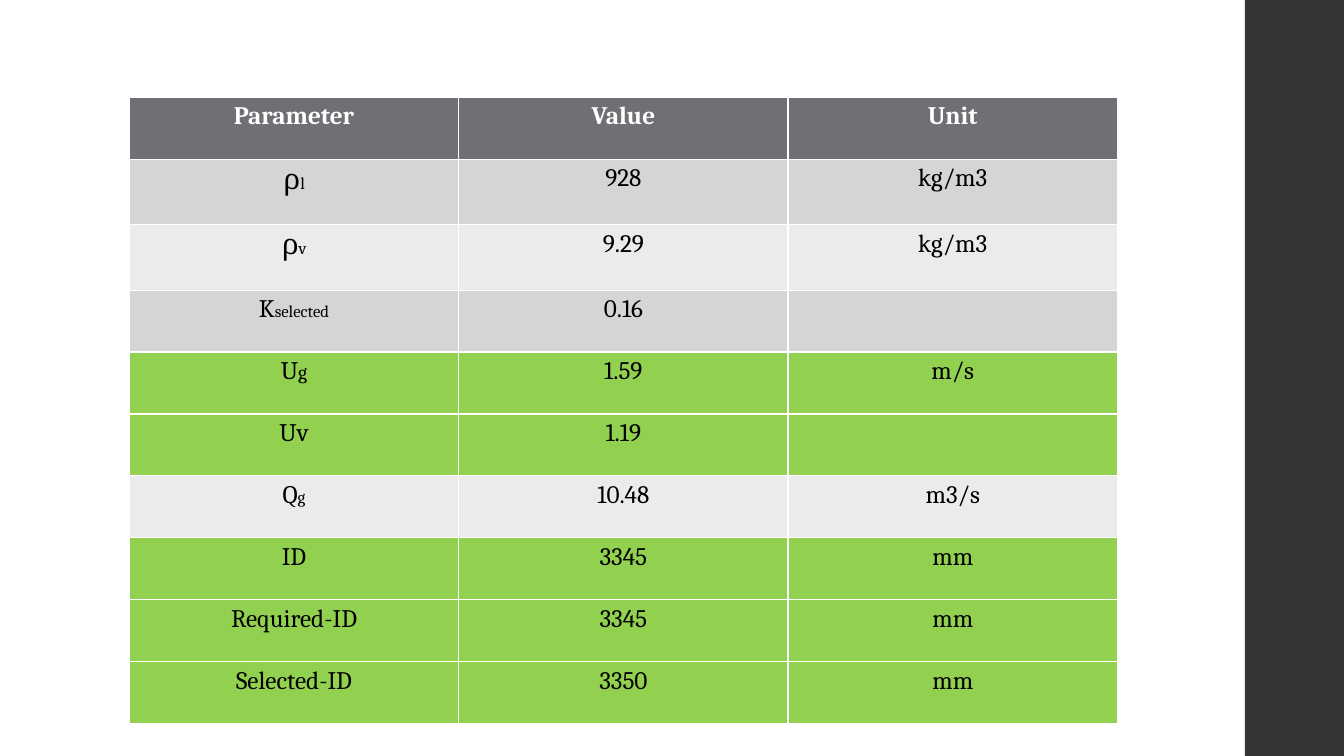
from pptx import Presentation
from pptx.dml.color import RGBColor
from pptx.enum.shapes import MSO_SHAPE as Shape
from pptx.enum.text import PP_ALIGN as Align
from pptx.util import Cm, Pt

WHITE = RGBColor(0xFF, 0xFF, 0xFF)
BLACK = RGBColor(0x00, 0x00, 0x00)
CHARCOAL = RGBColor(0x35, 0x35, 0x37)
HEADER_GRAY = RGBColor(0x6F, 0x6F, 0x74)
BAND_DARK = RGBColor(0xD5, 0xD5, 0xD6)
BAND_LIGHT = RGBColor(0xEB, 0xEB, 0xEB)
GREEN = RGBColor(0x92, 0xD0, 0x50)

FONT = "Cambria"
TEXT_SIZE = 18
HEADER = ("Parameter", "Value", "Unit")
PARAMETERS = [
    ([("ρ", 20), ("l", 12)], "928", "kg/m3", BAND_DARK),
    ([("ρ", 20), ("v", 12)], "9.29", "kg/m3", BAND_LIGHT),
    ([("K", 18), ("selected", 12)], "0.16", "", BAND_DARK),
    ([("U", 18), ("g", 14)], "1.59", "m/s", GREEN),
    ("Uv", "1.19", "", GREEN),
    ([("Q", 18), ("g", 12)], "10.48", "m3/s", BAND_LIGHT),
    ("ID", "3345", "mm", GREEN),
    ("Required-ID", "3345", "mm", GREEN),
    ("Selected-ID", "3350", "mm", GREEN),
]
ROW_HEIGHT = 1.56
TALL_ROW_HEIGHT = 1.65
TALL_ROWS = (1, 2)


def add_sidebar(slide, left, top, width, height):
    """Draw the dark band along the slide's right edge."""
    sidebar = slide.shapes.add_shape(
        Shape.RECTANGLE, Cm(left), Cm(top), Cm(width), Cm(height)
    )
    sidebar.shadow.inherit = False
    sidebar.fill.solid()
    sidebar.fill.fore_color.rgb = CHARCOAL
    sidebar.line.fill.background()


def fill_cell(cell, content, fill, color, bold=False):
    """Write plain text or sized pieces of text into a coloured cell."""
    cell.fill.solid()
    cell.fill.fore_color.rgb = fill
    paragraph = cell.text_frame.paragraphs[0]
    paragraph.alignment = Align.CENTER
    paragraph.font.size = Pt(TEXT_SIZE)
    pieces = [(content, TEXT_SIZE)] if isinstance(content, str) else content
    for text, size in pieces:
        if not text:
            continue
        run = paragraph.add_run()
        run.text = text
        run.font.name = FONT
        run.font.size = Pt(size)
        run.font.bold = bold
        run.font.color.rgb = color


def add_parameter_table(slide, left, top, width):
    """Draw the table of sizing parameters with its header row."""
    row_count = len(PARAMETERS) + 1
    heights = [
        TALL_ROW_HEIGHT if index in TALL_ROWS else ROW_HEIGHT
        for index in range(row_count)
    ]
    table = slide.shapes.add_table(
        row_count, len(HEADER), Cm(left), Cm(top), Cm(width), Cm(sum(heights))
    ).table
    table.horz_banding = False
    for row, height in zip(table.rows, heights):
        row.height = Cm(height)
    for cell, title in zip(table.rows[0].cells, HEADER):
        fill_cell(cell, title, HEADER_GRAY, WHITE, bold=True)
    for index, (*contents, fill) in enumerate(PARAMETERS, start=1):
        for cell, content in zip(table.rows[index].cells, contents):
            fill_cell(cell, content, fill, BLACK)


def main():
    """Build and save the presentation."""
    presentation = Presentation()
    presentation.slide_width = Cm(33.87)
    presentation.slide_height = Cm(19.05)
    slide = presentation.slides.add_slide(presentation.slide_layouts[6])
    add_sidebar(slide, 31.37, 0, 2.5, 19.05)
    add_parameter_table(slide, 3.26, 2.45, 24.9)
    presentation.save("out.pptx")


if __name__ == "__main__":
    main()
